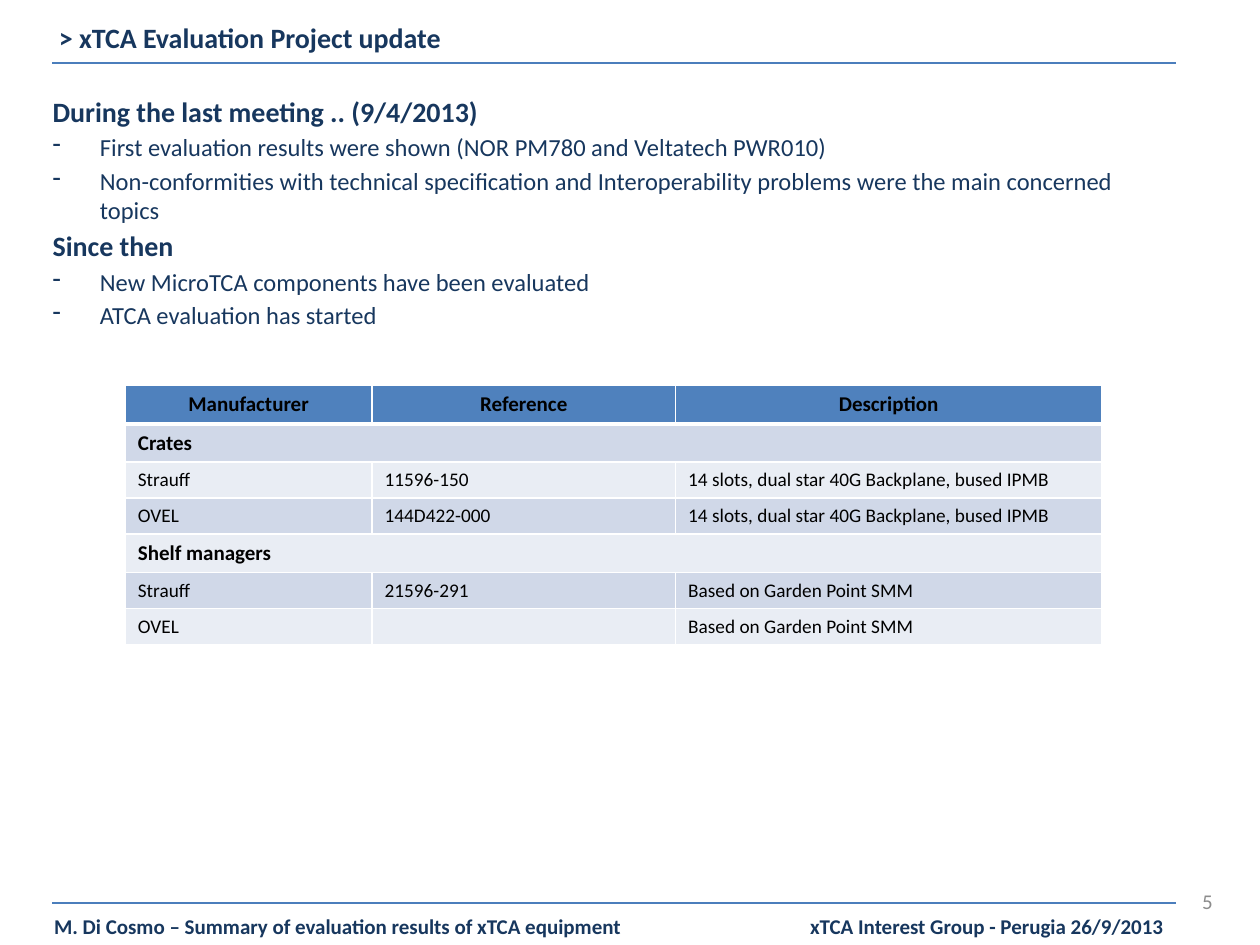
from lxml import etree
from pptx import Presentation
from pptx.dml.color import RGBColor
from pptx.enum.shapes import MSO_CONNECTOR
from pptx.enum.text import MSO_ANCHOR, PP_ALIGN
from pptx.oxml.ns import qn
from pptx.util import Pt

STRAIGHT = MSO_CONNECTOR.STRAIGHT
LEFT, CENTER, RIGHT = PP_ALIGN.LEFT, PP_ALIGN.CENTER, PP_ALIGN.RIGHT
TOP, MIDDLE = MSO_ANCHOR.TOP, MSO_ANCHOR.MIDDLE

FONT = "Calibri"
NAVY, RULE_BLUE, GREY = "17375E", "4B7EBC", "8C8C8C"
HEADER_FILL, BANDS = "4F81BD", ("D0D8E8", "E9EDF4")
BLACK, WHITE = "000000", "FFFFFF"

AGENDA = [
    ("During the last meeting .. (9/4/2013)", [
        "First evaluation results were shown (NOR PM780 and Veltatech PWR010)",
        "Non-conformities with technical specification and Interoperability "
        "problems were the main concerned topics",
    ]),
    ("Since then", [
        "New MicroTCA components have been evaluated",
        "ATCA evaluation has started",
    ]),
]

COLUMN_WIDTHS = (141, 173.5, 243.5)
HEADINGS = ("Manufacturer", "Reference", "Description")
BACKPLANE = "14 slots, dual star 40G Backplane, bused IPMB"
MANAGER = "Based on Garden Point SMM"
EQUIPMENT = [
    ("Crates",),
    ("Strauff", "11596-150", BACKPLANE),
    ("OVEL", "144D422-000", BACKPLANE),
    ("Shelf managers",),
    ("Strauff", "21596-291", MANAGER),
    ("OVEL", "", MANAGER),
]


def rgb(color):
    return RGBColor.from_string(color)


def write(paragraph, text, size=12, color=NAVY, bold=False, align=LEFT, before=0):
    paragraph.alignment = align
    if before:
        paragraph.space_before = Pt(before)
    if not text:
        # An empty paragraph takes its height from its end mark.
        etree.SubElement(paragraph._p, qn("a:endParaRPr"), sz=str(size * 100))
        return
    run = paragraph.add_run()
    run.text = text
    run.font.name = FONT
    run.font.size = Pt(size)
    run.font.bold = bold
    run.font.color.rgb = rgb(color)


def add_text_frame(slide, left, top, width, height, anchor=TOP):
    frame = slide.shapes.add_textbox(Pt(left), Pt(top), Pt(width), Pt(height)).text_frame
    frame.word_wrap = True
    frame.vertical_anchor = anchor
    return frame


def add_rule(slide, y):
    rule = slide.shapes.add_connector(STRAIGHT, Pt(30), Pt(y), Pt(672), Pt(y))
    rule.line.color.rgb = rgb(RULE_BLUE)
    rule.line.width = Pt(1.5)
    etree.SubElement(rule._element.spPr, qn("a:effectLst"))


def set_dash_bullet(paragraph, indent=27):
    properties = paragraph._p.get_or_add_pPr()
    properties.set("marL", str(Pt(indent)))
    properties.set("indent", str(-Pt(indent)))
    etree.SubElement(properties, qn("a:buChar"), char="-")


def set_tab(paragraph, position):
    tabs = etree.SubElement(paragraph._p.get_or_add_pPr(), qn("a:tabLst"))
    etree.SubElement(tabs, qn("a:tab"), pos=str(Pt(position)), algn="l")


def add_agenda(slide):
    frame = add_text_frame(slide, 23, 50.4, 654.5, 159)
    for index, (heading, points) in enumerate(AGENDA):
        paragraph = frame.add_paragraph() if index else frame.paragraphs[0]
        write(paragraph, heading, size=16, bold=True, before=2.4 if index else 0)
        for point in points:
            paragraph = frame.add_paragraph()
            set_dash_bullet(paragraph)
            write(paragraph, point, size=14, before=2.4)


def set_borders(cell, bottom=1):
    properties = cell._tc.get_or_add_tcPr()
    widths = {"a:lnL": 1, "a:lnR": 1, "a:lnT": 1, "a:lnB": bottom}
    for position, (tag, width) in enumerate(widths.items()):
        border = etree.Element(qn(tag), w=str(Pt(width)))
        fill = etree.SubElement(border, qn("a:solidFill"))
        etree.SubElement(fill, qn("a:srgbClr"), val=WHITE)
        properties.insert(position, border)


def fill_row(table, row, texts, fill, size=11, bold=False, align=LEFT, bottom=1):
    table.rows[row].height = Pt(size * 1.22 + 7.2)
    if len(texts) == 1:
        table.cell(row, 0).merge(table.cell(row, len(COLUMN_WIDTHS) - 1))
    for column in range(len(COLUMN_WIDTHS)):
        cell = table.cell(row, column)
        cell.fill.solid()
        cell.fill.fore_color.rgb = rgb(fill)
        set_borders(cell, bottom)
        text = texts[column] if column < len(texts) else ""
        write(cell.text_frame.paragraphs[0], text, size=size, color=BLACK,
              bold=bold, align=align)


def add_equipment_table(slide):
    table = slide.shapes.add_table(
        len(EQUIPMENT) + 1, len(COLUMN_WIDTHS),
        Pt(71.6), Pt(220.4), Pt(sum(COLUMN_WIDTHS)), Pt(148)).table
    for column, width in zip(table.columns, COLUMN_WIDTHS):
        column.width = Pt(width)
    fill_row(table, 0, HEADINGS, HEADER_FILL, size=12, bold=True, align=CENTER, bottom=3)
    for index, texts in enumerate(EQUIPMENT):
        is_section = len(texts) == 1
        fill_row(table, index + 1, texts, BANDS[index % 2],
                 size=12 if is_section else 11, bold=is_section)


def main():
    presentation = Presentation()
    presentation.slide_width, presentation.slide_height = Pt(720), Pt(540)
    slide = presentation.slides.add_slide(presentation.slide_layouts[6])

    for y in (36, 516):
        add_rule(slide, y)
    page_number = add_text_frame(slide, 532, 500.5, 168, 28.8, anchor=MIDDLE)
    write(page_number.paragraphs[0], "5", color=GREY, align=RIGHT)
    add_agenda(slide)
    add_equipment_table(slide)

    footer = add_text_frame(slide, 23.8, 518.4, 654, 21.6).paragraphs[0]
    set_tab(footer, 432)
    write(footer, "M. Di Cosmo – Summary of evaluation results of xTCA equipment\t"
                  "xTCA Interest Group - Perugia 26/9/2013", bold=True)
    title = add_text_frame(slide, 26.6, 8, 654, 26.6)
    write(title.paragraphs[0], "> xTCA Evaluation Project update", size=16, bold=True)

    presentation.save("out.pptx")


if __name__ == "__main__":
    main()
